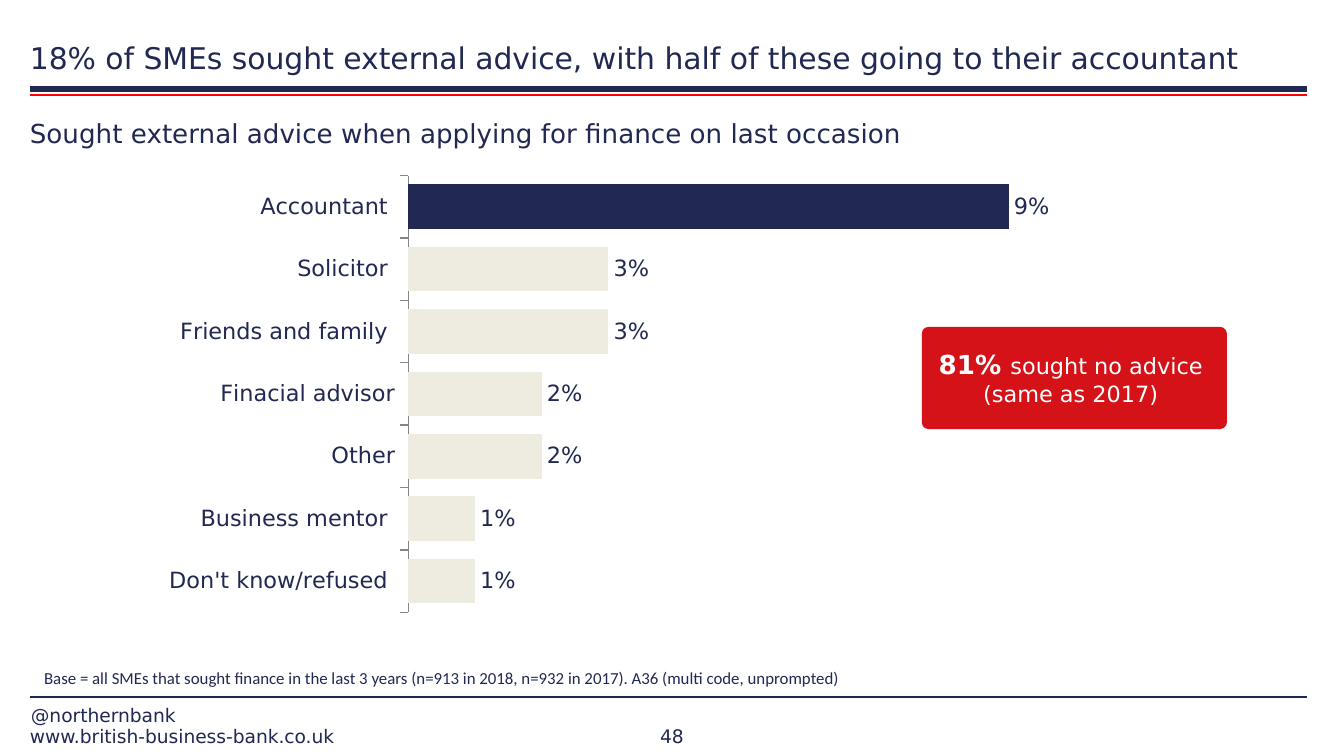
"""Builds the slide on SMEs that sought external advice, with a bar chart and a callout."""
from lxml import etree
from pptx import Presentation
from pptx.chart.data import CategoryChartData
from pptx.dml.color import RGBColor
from pptx.enum.chart import XL_CHART_TYPE, XL_LABEL_POSITION, XL_TICK_LABEL_POSITION, XL_TICK_MARK
from pptx.enum.shapes import MSO_CONNECTOR, MSO_SHAPE
from pptx.enum.text import MSO_ANCHOR, PP_ALIGN
from pptx.oxml import parse_xml
from pptx.oxml.ns import nsdecls, qn
from pptx.util import Inches, Pt

NAVY = RGBColor(0x21, 0x29, 0x52)
RED = RGBColor(0xFF, 0x00, 0x00)
CRIMSON = RGBColor(0xD4, 0x12, 0x17)
CREAM = RGBColor(0xEE, 0xEC, 0xE1)
GREY = RGBColor(0x86, 0x86, 0x86)
WHITE = RGBColor(0xFF, 0xFF, 0xFF)
SANS, CALIBRI = "DejaVu Sans", "Calibri"
LEFT, CENTER = PP_ALIGN.LEFT, PP_ALIGN.CENTER
TOP, MIDDLE, BOTTOM = MSO_ANCHOR.TOP, MSO_ANCHOR.MIDDLE, MSO_ANCHOR.BOTTOM
STRAIGHT, ROUNDED = MSO_CONNECTOR.STRAIGHT, MSO_SHAPE.ROUNDED_RECTANGLE
BAR, OUTSIDE_END = XL_CHART_TYPE.BAR_CLUSTERED, XL_LABEL_POSITION.OUTSIDE_END
TICK_OUT, LABELS_LOW = XL_TICK_MARK.OUTSIDE, XL_TICK_LABEL_POSITION.LOW
PERCENT = r"0\%"

prs = Presentation()
prs.slide_width = Inches(10)
prs.slide_height = prs.slide_width * 9 // 16
s = prs.slides.add_slide(prs.slide_layouts[6])


def share(x, y, w, h):
    """Turn percentages of the slide's width and height into lengths."""
    col, row = prs.slide_width / 100, prs.slide_height / 100
    return int(x * col), int(y * row), int(w * col), int(h * row)


def style(font, size, color, name=SANS, bold=False):
    """Set size, colour, typeface and weight of a font."""
    font.size, font.name, font.bold = Pt(size), name, bold
    font.color.rgb = color


for y, color, width in ((11.78, NAVY, 3), (12.53, RED, 1), (92.17, NAVY, 1)):
    line = s.shapes.add_connector(STRAIGHT, *share(97.23, y, 2.23, y))
    line.line.color.rgb = color
    line.line.width = Pt(width)
    etree.SubElement(line._element.spPr, qn("a:effectLst"))

texts = (
    ("www.british-business-bank.co.uk", (2.23, 95.8, 31.9, 3.02), 10, SANS, BOTTOM, LEFT, 0),
    ("@northernbank", (2.3, 93.06, 31.8, 3.02), 10, SANS, BOTTOM, LEFT, 0),
    ("48", (44.1, 95.8, 11.8, 3.02), 10, SANS, BOTTOM, CENTER, 0),
    ("18% of SMEs sought external advice, with half of these going to their accountant",
     (2.23, 0, 95, 9.96), 16, SANS, BOTTOM, LEFT, 0),
    ("Base = all SMEs that sought finance in the last 3 years (n=913 in 2018, n=932 in 2017). "
     "A36 (multi code, unprompted)", (2.3, 87.47, 97.7, 4.44), 9, CALIBRI, TOP, LEFT, 1),
    ("Sought external advice when applying for finance on last occasion",
     (2.23, 15.47, 95, 69.87), 14, SANS, TOP, LEFT, 0),
)
for text, place, size, name, anchor, align, inset in texts:
    tf = s.shapes.add_textbox(*share(*place)).text_frame
    tf.word_wrap, tf.vertical_anchor = True, anchor
    tf.margin_left = tf.margin_right = Inches(0.1 * inset)
    tf.margin_top = tf.margin_bottom = Inches(0.05 * inset)
    tf.text = text
    p = tf.paragraphs[0]
    p.alignment = align
    style(p.runs[0].font, size, NAVY, name)

data = CategoryChartData(number_format=PERCENT)
data.categories = ["Accountant ", "Solicitor ", "Friends and family ", "Finacial advisor",
                   "Other", "Business mentor ", "Don't know/refused "]
data.add_series("Series 1", (9, 3, 3, 2, 2, 1, 1))
chart = s.shapes.add_chart(BAR, *share(4.85, 23.13, 85.1, 57.96), data).chart
chart.has_legend = chart.has_title = False
style(chart.font, 12, NAVY)

axis = chart.category_axis
axis.reverse_order = True
axis.major_tick_mark = TICK_OUT
axis.tick_label_position = LABELS_LOW
axis.format.line.color.rgb = GREY
style(axis.tick_labels.font, 12, NAVY)
axis = chart.value_axis
axis.minimum_scale, axis.maximum_scale = 0, 12
axis.has_major_gridlines = axis.visible = False

plot = chart.plots[0]
plot.gap_width, plot.vary_by_categories = 40, False
plot.has_data_labels = True
labels = plot.data_labels
labels.show_value, labels.position = True, OUTSIDE_END
labels.number_format, labels.number_format_is_linked = PERCENT, False
style(labels.font, 12, NAVY)
bars = plot.series[0]
for fill, color in ((bars.format.fill, CREAM), (bars.points[0].format.fill, NAVY)):
    fill.solid()
    fill.fore_color.rgb = color

area = chart._chartSpace.chart.plotArea
for old in area.findall(qn("c:layout")):
    area.remove(old)
area.insert(0, parse_xml(
    f'<c:layout {nsdecls("c")}><c:manualLayout><c:layoutTarget val="inner"/>'
    '<c:xMode val="edge"/><c:yMode val="edge"/><c:x val="0.3"/><c:y val="0"/>'
    '<c:w val="0.7"/><c:h val="1"/></c:manualLayout></c:layout>'))

sp = s.shapes.add_shape(ROUNDED, *share(68.64, 43.33, 22.6, 13.33))
sp.adjustments[0] = 0.06
sp.shadow.inherit = False
sp.fill.solid()
sp.fill.fore_color.rgb = sp.line.color.rgb = CRIMSON
sp.line.width = Pt(0.75)
tf = sp.text_frame
tf.word_wrap, tf.vertical_anchor = True, MIDDLE
p = tf.paragraphs[0]
p.alignment = CENTER
for text, size, bold in (("81% ", 14, True), ("sought no advice ", 12, False),
                         ("(same as 2017) ", 12, False)):
    if text.startswith("("):
        p.add_line_break()
    r = p.add_run()
    r.text = text
    style(r.font, size, WHITE, bold=bold)

prs.save("out.pptx")
